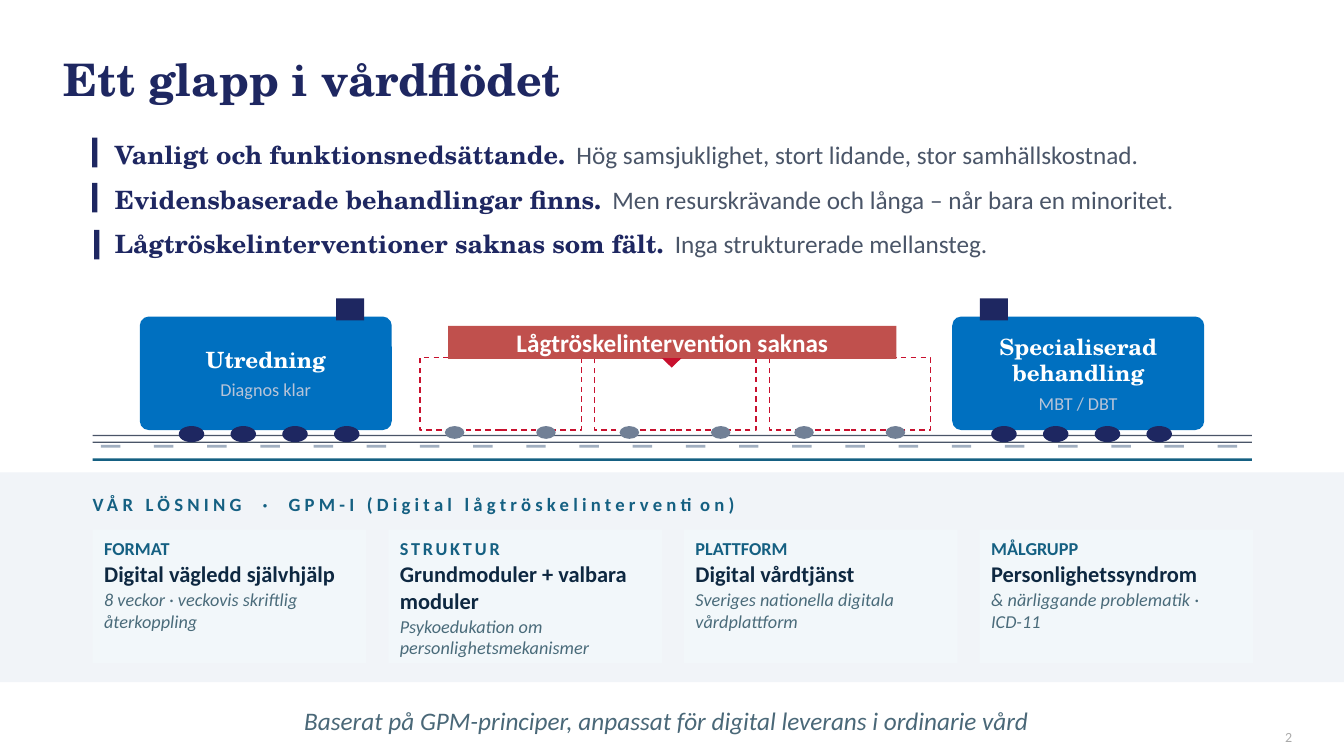
from dataclasses import dataclass
from typing import NamedTuple

from lxml.etree import SubElement
from pptx import Presentation
from pptx.dml.color import RGBColor
from pptx.enum.dml import MSO_LINE
from pptx.enum.shapes import MSO_SHAPE
from pptx.enum.text import MSO_ANCHOR, MSO_AUTO_SIZE, PP_ALIGN
from pptx.oxml.ns import qn
from pptx.util import Inches, Pt


@dataclass(frozen=True)
class Theme:
    serif: str = "TeX Gyre Schola"
    sans: str = "Calibri"
    navy: str = "1E2761"
    slate: str = "4A5568"
    blue: str = "0070C0"
    pale: str = "B8C4D8"
    white: str = "FFFFFF"
    tie: str = "A0AEC0"
    steel: str = "718096"
    red: str = "C8102E"
    brick: str = "C0504D"
    teal: str = "156082"
    band: str = "F1F4F8"
    card: str = "F2F7FA"
    ink: str = "0E2841"
    note: str = "4A6B7A"
    foot: str = "4A6878"
    gray: str = "AAAAAA"
    title: float = 48
    lead: float = 27
    head: float = 24
    label: float = 20
    small: float = 19.5
    page: float = 15


class Box(NamedTuple):
    left: float
    top: float
    width: float
    height: float


class Point(NamedTuple):
    claim: str
    detail: str
    bar: Box


class Car(NamedTuple):
    name: str
    stage: str
    left: float
    stack: float


class Card(NamedTuple):
    label: str
    head: str
    note: str
    space: float = 0


T = Theme()
LEFT, WIDE = 1.38, 17.25
POINTS = [
    Point("Vanligt och funktionsnedsättande.",
          "  Hög samsjuklighet, stort lidande, stor samhällskostnad.", Box(1.37, 2.05, 0.08, 0.44)),
    Point("Evidensbaserade behandlingar finns.",
          "  Men resurskrävande och långa – når bara en minoritet.", Box(1.37, 2.72, 0.08, 0.44)),
    Point("Lågtröskelinterventioner saknas som fält.",
          "  Inga strukturerade mellansteg.", Box(1.4, 3.42, 0.08, 0.44)),
]
CARS = [
    Car("Utredning", "Diagnos klar", 2.08, 5),
    Car("Specialiserad behandling", "MBT / DBT", 14.17, 14.58),
]
CARDS = [
    Card("FORMAT", "Digital vägledd självhjälp", "8 veckor · veckovis skriftlig återkoppling"),
    Card("STRUKTUR", "Grundmoduler + valbara moduler",
         "Psykoedukation om personlighetsmekanismer", 3),
    Card("PLATTFORM", "Digital vårdtjänst", "Sveriges nationella digitala vårdplattform"),
    Card("MÅLGRUPP", "Personlighetssyndrom", "& närliggande problematik · ICD-11"),
]


def place(shape, box: Box) -> None:
    shape.left, shape.top, shape.width, shape.height = map(Inches, box)


def frame(shape, anchor=MSO_ANCHOR.MIDDLE, inset=(0, 0, 0, 0)):
    """Set wrap, anchor and insets (left, top, right, bottom); return the text frame."""
    text = shape.text_frame
    text.word_wrap = True
    text.auto_size = MSO_AUTO_SIZE.NONE
    text.vertical_anchor = anchor
    (text.margin_left, text.margin_top,
     text.margin_right, text.margin_bottom) = map(Inches, inset)
    return text


def line(text, first: bool = False, align=PP_ALIGN.LEFT, before: float = 0, after: float = 0):
    para = text.paragraphs[0] if first else text.add_paragraph()
    para.alignment = align
    para.space_before, para.space_after = Pt(before), Pt(after)
    return para


def write(para, words: str, *, size: float, color: str, font: str = T.sans,
          bold: bool = False, italic: bool = False, space: float = 0) -> None:
    run = para.add_run()
    run.text = words
    run.font.size, run.font.name = Pt(size), font
    run.font.bold, run.font.italic = bold, italic
    run.font.color.rgb = RGBColor.from_string(color)
    if space:
        run._r.get_or_add_rPr().set("spc", str(int(space * 100)))


def draw(slide, box: Box, fill: str = "", kind=MSO_SHAPE.RECTANGLE, edge: str = ""):
    shape = slide.shapes.add_shape(kind, *map(Inches, box))
    shape.shadow.inherit = False
    if fill:
        shape.fill.solid()
        shape.fill.fore_color.rgb = RGBColor.from_string(fill)
    else:
        shape.fill.background()
    if edge:
        shape.line.color.rgb = RGBColor.from_string(edge)
        shape.line.width = Pt(1.5)
        shape.line.dash_style = MSO_LINE.DASH
    else:
        shape.line.fill.background()
    return shape


def label(slide, box: Box, words: str, align=PP_ALIGN.LEFT, inset=(0, 0, 0, 0), **style) -> None:
    area = slide.shapes.add_textbox(*map(Inches, box))
    write(line(frame(area, MSO_ANCHOR.TOP, inset), True, align), words, **style)


def draw_points(slide, body) -> None:
    place(body, Box(1.71, 1.99, 16.92, 1.94))
    text = frame(body)
    for i, point in enumerate(POINTS):
        para = line(text, i == 0, before=15.2 if i else 0)
        props = para._p.get_or_add_pPr()
        props.set("marL", "0")
        props.set("indent", "0")
        SubElement(props, qn("a:buNone"))
        write(para, point.claim, size=T.lead, color=T.navy, font=T.serif, bold=True)
        write(para, point.detail, size=T.lead, color=T.slate)
        draw(slide, point.bar, T.navy)


def draw_car(slide, car: Car) -> None:
    shape = draw(slide, Box(car.left, 4.71, 3.75, 1.69), T.blue, MSO_SHAPE.ROUNDED_RECTANGLE)
    shape.adjustments[0] = 0.08
    text = frame(shape, inset=(0.38, 0.15, 0.38, 0.15))
    write(line(text, True, PP_ALIGN.CENTER), car.name,
          size=T.head, color=T.white, font=T.serif, bold=True)
    write(line(text, align=PP_ALIGN.CENTER, before=6), car.stage, size=T.small, color=T.pale)
    for i in range(4):
        draw(slide, Box(car.left + 0.58 + 0.77 * i, 6.34, 0.38, 0.24), T.navy, MSO_SHAPE.OVAL)
    draw(slide, Box(car.stack, 4.44, 0.42, 0.33), T.navy)


def draw_track(slide) -> None:
    for top in (6.47, 6.57):
        draw(slide, Box(LEFT, top, WIDE, 0.02), T.slate)
    count, start, end = 22, 1.5, 18.12
    for i in range(count):
        draw(slide, Box(start + (end - start) * i / (count - 1), 6.62, 0.29, 0.04), T.tie)


def draw_gap(slide) -> None:
    """Draw the three missing cars and the banner above them."""
    for i in range(3):
        left = 6.25 + 2.6 * i
        draw(slide, Box(left, 5.32, 2.4, 1.08), edge=T.red)
        for shift in (0.37, 1.73):
            draw(slide, Box(left + shift, 6.34, 0.29, 0.19), T.steel, MSO_SHAPE.OVAL)
    sign = draw(slide, Box(6.67, 4.85, 6.67, 0.49), T.brick)
    write(line(frame(sign), True, PP_ALIGN.CENTER), "Lågtröskelintervention saknas",
          size=T.lead, color=T.white, bold=True)
    draw(slide, Box(9.85, 5.33, 0.29, 0.14), T.red, MSO_SHAPE.ISOSCELES_TRIANGLE).rotation = 180


def draw_card(slide, card: Card, left: float) -> None:
    shape = draw(slide, Box(left, 7.88, 4.07, 1.99), T.card)
    text = frame(shape, MSO_ANCHOR.TOP, (0.17, 0.12, 0.12, 0.08))
    write(line(text, True, after=1.2), card.label,
          size=T.small, color=T.teal, bold=True, space=card.space)
    write(line(text, after=0.6), card.head, size=T.head, color=T.ink, bold=True)
    write(line(text), card.note, size=T.small, color=T.note, italic=True)


def main() -> None:
    deck = Presentation()
    deck.slide_width, deck.slide_height = Inches(20), Inches(11.25)
    slide = deck.slides.add_slide(deck.slide_layouts[1])
    title, body = slide.placeholders
    place(title, Box(0.85, 0.54, 9, 1.25))
    write(line(frame(title, inset=(0.1, 0.05, 0.1, 0.05)), True), "Ett glapp i vårdflödet",
          size=T.title, color=T.navy, font=T.serif, bold=True)
    draw_points(slide, body)
    draw_track(slide)
    for car in CARS:
        draw_car(slide, car)
    draw_gap(slide)
    draw(slide, Box(0, 7.03, 20, 3.12), T.band)
    draw(slide, Box(LEFT, 6.82, WIDE, 0.04), T.teal)
    label(slide, Box(LEFT, 7.33, WIDE, 0.42),
          "VÅR LÖSNING  ·  GPM-I (Digital lågtröskelintervention)",
          size=T.label, color=T.teal, bold=True, space=4.5)
    for i, card in enumerate(CARDS):
        draw_card(slide, card, LEFT + 4.4 * i)
    label(slide, Box(1.29, 10.49, WIDE, 0.38),
          "Baserat på GPM-principer, anpassat för digital leverans i ordinarie vård",
          PP_ALIGN.CENTER, size=T.lead, color=T.foot, italic=True)
    label(slide, Box(18.5, 10.79, 0.83, 0.38), "2", PP_ALIGN.RIGHT,
          (0.1, 0.05, 0.1, 0.05), size=T.page, color=T.gray)
    deck.save("out.pptx")


if __name__ == "__main__":
    main()
